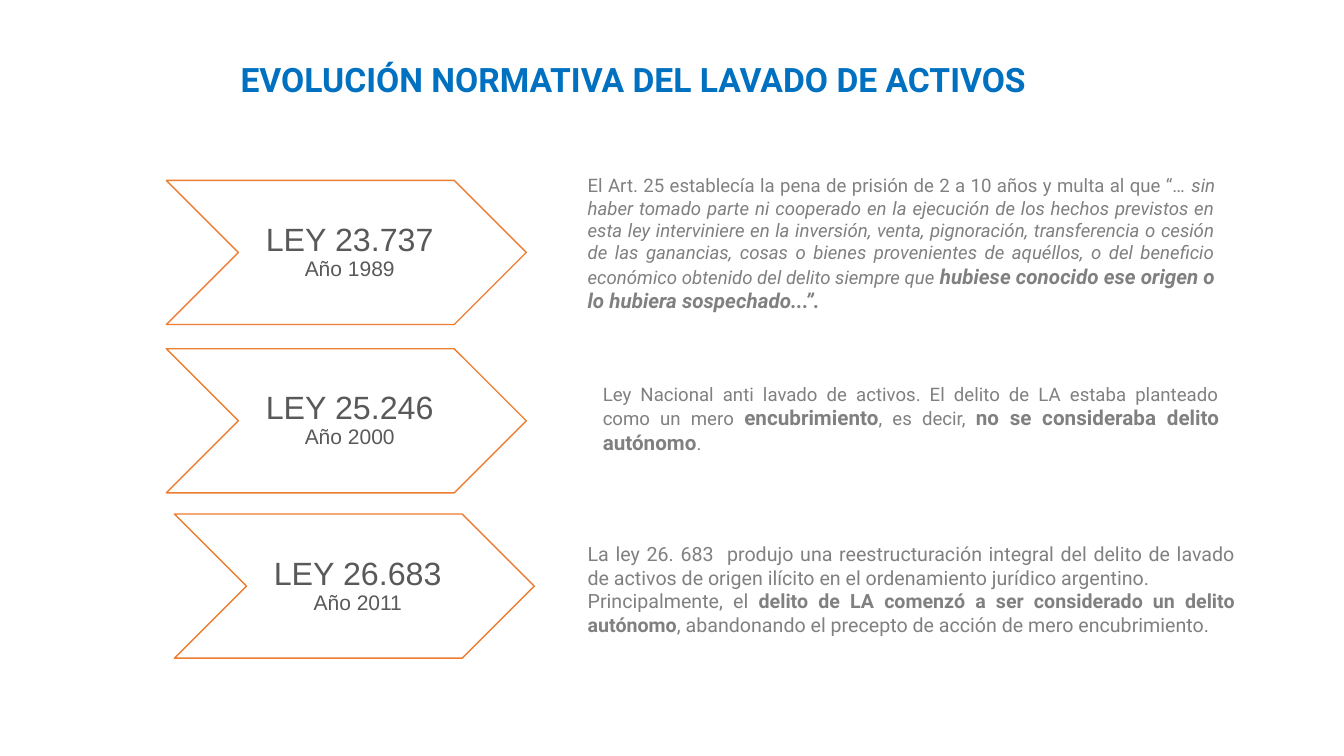
from pptx import Presentation
from pptx.dml.color import RGBColor
from pptx.enum.shapes import MSO_SHAPE
from pptx.enum.text import MSO_ANCHOR, MSO_AUTO_SIZE, PP_ALIGN
from pptx.util import Inches, Pt

CHEVRON = MSO_SHAPE.CHEVRON
CENTER, JUSTIFY = PP_ALIGN.CENTER, PP_ALIGN.JUSTIFY
TOP, MIDDLE = MSO_ANCHOR.TOP, MSO_ANCHOR.MIDDLE
NO_FIT, GROW = MSO_AUTO_SIZE.NONE, MSO_AUTO_SIZE.SHAPE_TO_FIT_TEXT
TITLE_ONLY = 5

COLORS = {"title": "0070C0", "outline": "ED7D31", "fill": "FFFFFF",
          "law": "595959", "body": "808080"}
HEADING_FONT, LAW_FONT = "Roboto", "Arial"


class SlideBuilder:
    """Holds the style and the current slide."""

    def __init__(self, slide):
        self.slide = slide

    def color(self, name):
        return RGBColor.from_string(COLORS[name])

    def format_run(self, run, font, size, color, bold=False, italic=False):
        run.font.name = font
        run.font.size = Pt(size)
        run.font.color.rgb = self.color(color)
        run.font.bold = bold
        run.font.italic = italic

    def set_margins(self, text_frame, left, other):
        text_frame.margin_left = Inches(left)
        text_frame.margin_top = Inches(other)
        text_frame.margin_right = Inches(other)
        text_frame.margin_bottom = Inches(other)

    def title(self, text, left, top, width, height):
        shape = self.slide.shapes.title
        shape.left, shape.top = Inches(left), Inches(top)
        shape.width, shape.height = Inches(width), Inches(height)
        text_frame = shape.text_frame
        text_frame.text = text
        text_frame.word_wrap = True
        text_frame.auto_size = NO_FIT
        text_frame.vertical_anchor = TOP
        self.set_margins(text_frame, 0.13, 0.13)
        paragraph = text_frame.paragraphs[0]
        paragraph.alignment = CENTER
        self.format_run(paragraph.runs[0], HEADING_FONT, 24, "title", bold=True)

    def law_chevron(self, law, year, left, top):
        shape = self.slide.shapes.add_shape(
            CHEVRON, Inches(left), Inches(top), Inches(3.57), Inches(1.43))
        shape.shadow.inherit = False
        shape.fill.solid()
        shape.fill.fore_color.rgb = self.color("fill")
        shape.line.color.rgb = self.color("outline")
        shape.line.width = Pt(1)
        text_frame = shape.text_frame
        text_frame.word_wrap = True
        text_frame.vertical_anchor = MIDDLE
        self.set_margins(text_frame, 0.1, 0.03)
        paragraph = text_frame.paragraphs[0]
        paragraph.alignment = CENTER
        paragraph.line_spacing = 0.9
        # The year wraps below the name of the law
        for text, size in ((law + " ", 23), (year, 15)):
            run = paragraph.add_run()
            run.text = text
            self.format_run(run, LAW_FONT, size, "law")

    def description(self, paragraphs, left, top, width, height, size, bold_size):
        box = self.slide.shapes.add_textbox(
            Inches(left), Inches(top), Inches(width), Inches(height))
        text_frame = box.text_frame
        text_frame.word_wrap = True
        text_frame.auto_size = GROW
        for index, pieces in enumerate(paragraphs):
            paragraph = text_frame.add_paragraph() if index else text_frame.paragraphs[0]
            paragraph.alignment = JUSTIFY
            for text, style in pieces:
                run = paragraph.add_run()
                run.text = text
                bold = "b" in style
                self.format_run(run, HEADING_FONT, bold_size if bold else size,
                                "body", bold, "i" in style)


# Description text: paragraphs of (text, style), with b for bold and i for italic
LAW_1989 = [[
    ("El Art. 25 establecía la pena de prisión de 2 a 10 años y multa al que “… ", ""),
    ("sin haber tomado parte ni cooperado en la ejecución de los hechos previstos "
     "en esta ley interviniere en la inversión, venta, pignoración, transferencia o "
     "cesión de las ganancias, cosas o bienes provenientes de aquéllos, o del "
     "beneficio económico obtenido del delito siempre que ", "i"),
    ("hubiese conocido ese origen o lo hubiera sospechado...”.", "bi"),
]]
LAW_2000 = [[
    ("Ley Nacional anti lavado de activos. El delito de LA estaba planteado "
     "como un mero ", ""),
    ("encubrimiento", "b"),
    (", es decir, ", ""),
    ("no se consideraba delito autónomo", "b"),
    (".", ""),
]]
LAW_2011 = [
    [("La ley 26. 683  produjo una reestructuración integral del delito de lavado "
      "de activos de origen ilícito en el ordenamiento jurídico argentino.", "")],
    [("Principalmente, el ", ""),
     ("delito de LA comenzó a ser considerado un delito autónomo", "b"),
     (", abandonando el precepto de acción de mero encubrimiento.", "")],
]


def main():
    presentation = Presentation()
    presentation.slide_width = Inches(13.33)
    presentation.slide_height = Inches(7.5)
    slide = presentation.slides.add_slide(presentation.slide_layouts[TITLE_ONLY])
    builder = SlideBuilder(slide)

    # Title
    builder.title("EVOLUCIÓN NORMATIVA DEL LAVADO DE ACTIVOS", 2.22, 0.45, 8.12, 0.78)

    # Laws in order of year
    for law, year, left, top in (
            ("LEY 23.737", "Año 1989", 1.65, 1.79),
            ("LEY 25.246", "Año 2000", 1.65, 3.46),
            ("LEY 26.683", "Año 2011", 1.73, 5.1)):
        builder.law_chevron(law, year, left, top)

    # What each law established
    builder.description(LAW_1989, 5.73, 1.68, 6.42, 1.47, 13.3, 14.7)
    builder.description(LAW_2000, 5.88, 3.75, 6.31, 0.82, 13.3, 14.7)
    builder.description(LAW_2011, 5.73, 5.33, 6.62, 1.04, 14, 14)

    presentation.save("out.pptx")


if __name__ == "__main__":
    main()
